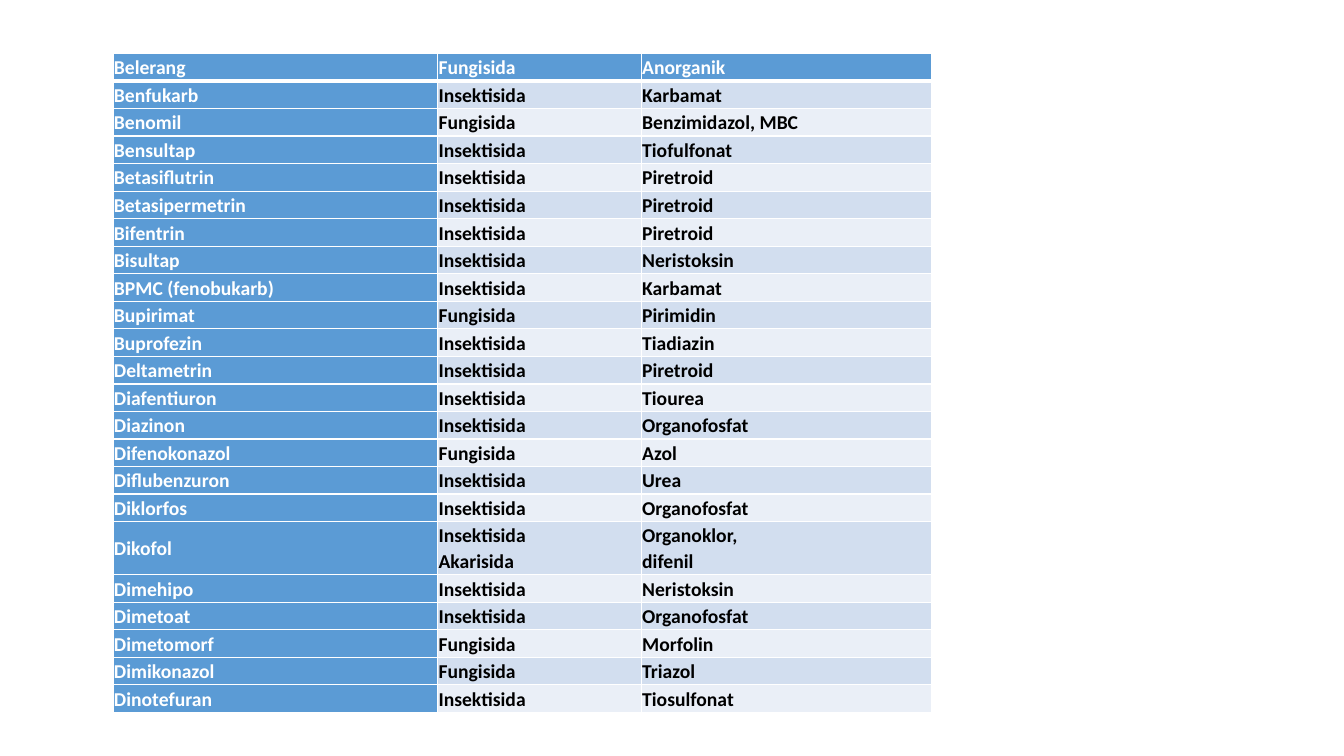
from dataclasses import dataclass

from lxml import etree
from pptx import Presentation
from pptx.dml.color import RGBColor
from pptx.enum.text import MSO_ANCHOR
from pptx.oxml.ns import qn
from pptx.util import Inches, Pt

MIDDLE = MSO_ANCHOR.MIDDLE
BLANK_LAYOUT = 6


@dataclass(frozen=True)
class Theme:
    """Colours, font and sizes of the slide."""
    font: str = "Calibri"
    size: float = 14
    line_spacing: float = 1.07
    accent: str = "5B9BD5"
    bands: tuple = ("EAEFF7", "D2DEEF")
    light: str = "FFFFFF"
    dark: str = "000000"
    rule: float = 1
    header_rule: float = 3


THEME = Theme()
COLUMN_WIDTHS = (3.22, 2.02, 2.88)
ROW_HEIGHT = 0.27
TALL_ROW_HEIGHT = 0.51
CELL_MARGIN = 0.01

PESTICIDES = (
    ("Belerang", "Fungisida", "Anorganik"),
    ("Benfukarb", "Insektisida", "Karbamat"),
    ("Benomil", "Fungisida", "Benzimidazol, MBC"),
    ("Bensultap", "Insektisida", "Tiofulfonat"),
    ("Betasiflutrin", "Insektisida", "Piretroid"),
    ("Betasipermetrin", "Insektisida", "Piretroid"),
    ("Bifentrin", "Insektisida", "Piretroid"),
    ("Bisultap", "Insektisida", "Neristoksin"),
    ("BPMC (fenobukarb)", "Insektisida", "Karbamat"),
    ("Bupirimat", "Fungisida", "Pirimidin"),
    ("Buprofezin", "Insektisida", "Tiadiazin"),
    ("Deltametrin", "Insektisida", "Piretroid"),
    ("Diafentiuron", "Insektisida", "Tiourea"),
    ("Diazinon", "Insektisida", "Organofosfat"),
    ("Difenokonazol", "Fungisida", "Azol"),
    ("Diflubenzuron", "Insektisida", "Urea"),
    ("Diklorfos", "Insektisida", "Organofosfat"),
    ("Dikofol", "Insektisida\nAkarisida", "Organoklor,\ndifenil"),
    ("Dimehipo", "Insektisida", "Neristoksin"),
    ("Dimetoat", "Insektisida", "Organofosfat"),
    ("Dimetomorf", "Fungisida", "Morfolin"),
    ("Dimikonazol", "Fungisida", "Triazol"),
    ("Dinotefuran", "Insektisida", "Tiosulfonat"),
)


def set_borders(cell, top, bottom):
    """Draw light rules on all four sides of a cell."""
    properties = cell._tc.get_or_add_tcPr()
    widths = {"a:lnL": THEME.rule, "a:lnR": THEME.rule, "a:lnT": top, "a:lnB": bottom}
    for side, width in widths.items():
        line = etree.SubElement(properties, qn(side), w=str(Pt(width)))
        fill = etree.SubElement(line, qn("a:solidFill"))
        etree.SubElement(fill, qn("a:srgbClr"), val=THEME.light)


def fill_cell(cell, text, row, column):
    """Write one cell and style it by its place in the table."""
    heading = row == 0 or column == 0
    set_borders(
        cell,
        top=THEME.header_rule if row == 1 else THEME.rule,
        bottom=THEME.header_rule if row == 0 else THEME.rule,
    )
    cell.fill.solid()
    background = THEME.accent if heading else THEME.bands[row % 2]
    cell.fill.fore_color.rgb = RGBColor.from_string(background)
    cell.vertical_anchor = MIDDLE
    cell.margin_left = cell.margin_right = Inches(CELL_MARGIN)
    cell.margin_top = cell.margin_bottom = Inches(CELL_MARGIN)
    para = cell.text_frame.paragraphs[0]
    para.text = text
    para.line_spacing = THEME.line_spacing
    for span in para.runs:
        span.font.name = THEME.font
        span.font.size = Pt(THEME.size)
        span.font.bold = True
        span.font.color.rgb = RGBColor.from_string(THEME.light if heading else THEME.dark)


def add_pesticide_table(page, left, top):
    """Place the table of pesticides with its corner at left, top."""
    heights = [
        TALL_ROW_HEIGHT if any("\n" in text for text in entry) else ROW_HEIGHT
        for entry in PESTICIDES
    ]
    table = page.shapes.add_table(
        len(PESTICIDES), len(COLUMN_WIDTHS), Inches(left), Inches(top),
        Inches(sum(COLUMN_WIDTHS)), Inches(sum(heights)),
    ).table
    table.first_col = True
    for column, width in zip(table.columns, COLUMN_WIDTHS):
        column.width = Inches(width)
    for row, (entry, height) in enumerate(zip(PESTICIDES, heights)):
        table.rows[row].height = Inches(height)
        for column, text in enumerate(entry):
            fill_cell(table.cell(row, column), text, row, column)


def main():
    """Build the deck and save it."""
    deck = Presentation()
    deck.slide_width, deck.slide_height = Inches(13.33), Inches(7.5)
    page = deck.slides.add_slide(deck.slide_layouts[BLANK_LAYOUT])
    add_pesticide_table(page, left=1.12, top=0.53)
    deck.save("out.pptx")


if __name__ == "__main__":
    main()
